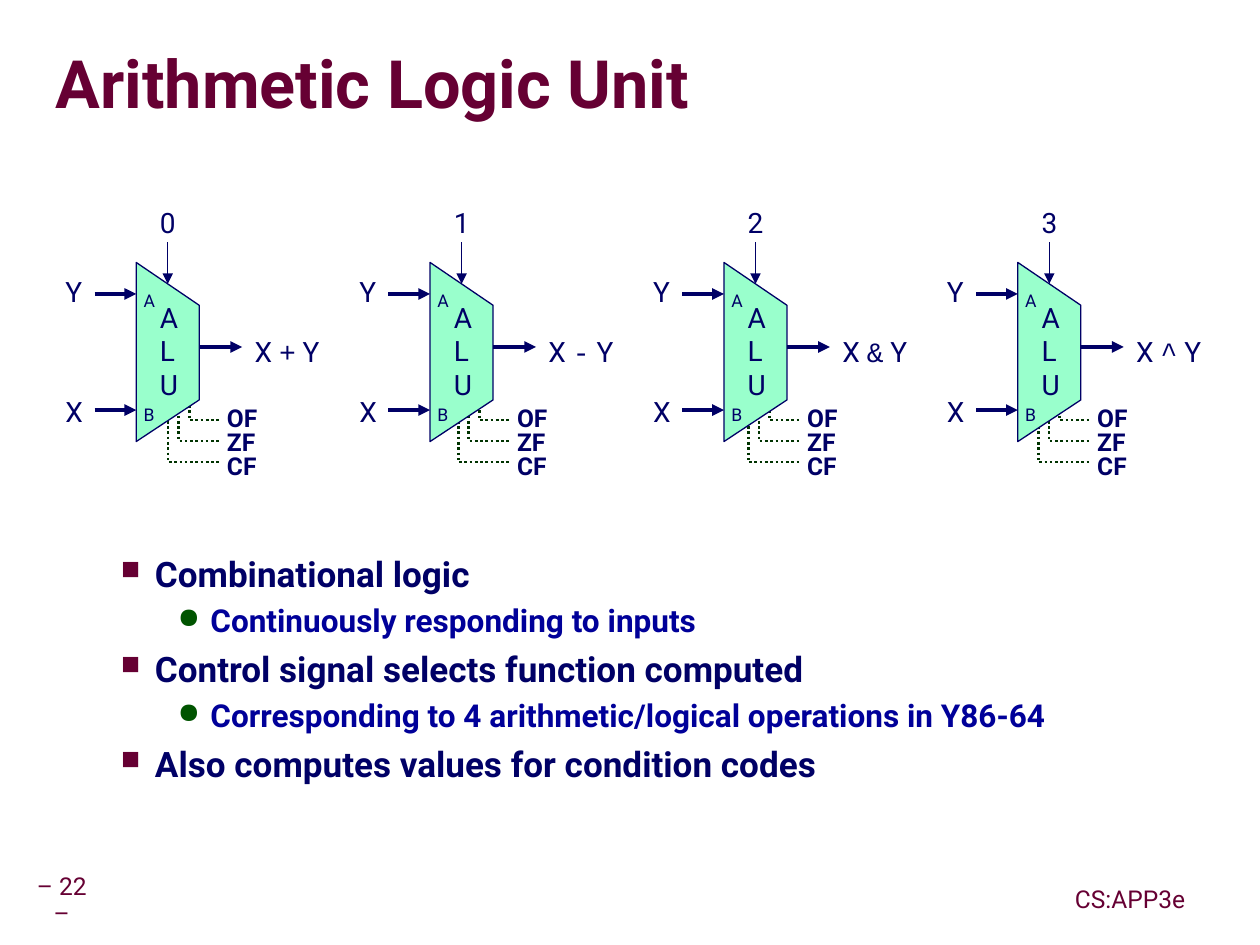
from dataclasses import dataclass
from lxml.etree import SubElement
from pptx import Presentation
from pptx.dml.color import RGBColor
from pptx.enum.dml import MSO_LINE
from pptx.enum.shapes import MSO_CONNECTOR
from pptx.enum.text import MSO_ANCHOR, MSO_AUTO_SIZE, PP_ALIGN
from pptx.oxml.ns import qn
from pptx.util import Inches, Pt


@dataclass(frozen=True)
class Theme:
    wine: str = "660033"
    navy: str = "000066"
    blue: str = "000099"
    moss: str = "003300"
    leaf: str = "005400"
    mint: str = "99FFCC"
    shade: str = "969696"
    font: str = "Roboto"
    mono: str = "Courier New"
    title: int = 38
    head: int = 20
    sub: int = 18
    label: int = 16
    small: int = 14
    port: int = 10
    thin: float = 0.75
    dot: float = 1.5
    thick: float = 2.25


def write(para, text, size, color, font, bold=False):
    run = para.add_run()
    run.text = text
    run.font.size = Pt(size)
    run.font.color.rgb = RGBColor.from_string(color)
    run.font.name = font
    run.font.bold = bold
    return run


class Deck:
    def __init__(self, theme):
        self.theme = theme
        self.show = Presentation()
        self.show.slide_width, self.show.slide_height = Inches(9.99), Inches(7.49)
        self.slide = self.show.slides.add_slide(self.show.slide_layouts[6])

    def frame(self, x, y, w, h, pad=(0.1, 0.05), wrap=False, anchor=MSO_ANCHOR.TOP):
        box = self.slide.shapes.add_textbox(*map(Inches, (x, y, w, h)))
        frame = box.text_frame
        frame.margin_left = frame.margin_right = Inches(pad[0])
        frame.margin_top = frame.margin_bottom = Inches(pad[1])
        frame.word_wrap = wrap
        frame.auto_size = MSO_AUTO_SIZE.NONE if wrap else MSO_AUTO_SIZE.SHAPE_TO_FIT_TEXT
        frame.vertical_anchor = anchor
        return frame

    def text(self, text, x, y, w, h, size=None, color=None, bold=False,
             align=PP_ALIGN.LEFT, space=1.0, **box):
        """Each line of the text becomes a paragraph; returns the last run."""
        look = self.theme
        frame = self.frame(x, y, w, h, **box)
        for i, line in enumerate(text.split("\n")):
            para = frame.add_paragraph() if i else frame.paragraphs[0]
            para.alignment, para.line_spacing = align, space
            run = write(para, line, size or look.label, color or look.navy, look.font, bold)
        return run

    def title(self, text):
        look = self.theme
        run = self.text(text, 0.44, 0.27, 9.52, 0.85, size=look.title, color=look.wine,
                        bold=True, space=0.87, pad=(0, 0), wrap=True,
                        anchor=MSO_ANCHOR.MIDDLE)
        glow = SubElement(SubElement(Inner(run), qn("a:effectLst")), qn("a:outerShdw"),
                          dist="35921", dir="2700000", algn="ctr")
        SubElement(glow, qn("a:srgbClr"), val=look.shade)
        # The effect must come directly after the text colour
        Inner(run).insert(1, glow.getparent())

    def arrow(self, x1, y1, x2, y2, width):
        line = self.slide.shapes.add_connector(
            MSO_CONNECTOR.STRAIGHT, *map(Inches, (x1, y1, x2, y2)))
        line.line.color.rgb = RGBColor.from_string(self.theme.navy)
        line.line.width = Pt(width)
        SubElement(line.line._get_or_add_ln(), qn("a:tailEnd"), type="triangle")
        SubElement(line._element.spPr, qn("a:effectLst"))

    def outline(self, points, color, width, fill=None, dash=None):
        spots = [(Inches(x), Inches(y)) for x, y in points]
        pen = self.slide.shapes.build_freeform(*spots[0])
        pen.add_line_segments(spots[1:], close=fill is not None)
        shape = pen.convert_to_shape()
        shape.shadow.inherit = False
        if fill:
            shape.fill.solid()
            shape.fill.fore_color.rgb = RGBColor.from_string(fill)
        else:
            shape.fill.background()
        shape.line.color.rgb = RGBColor.from_string(color)
        shape.line.width = Pt(width)
        if dash:
            shape.line.dash_style = dash

    def flags(self, x):
        """Condition codes, with dotted leads stepping down from the unit."""
        look = self.theme
        for i, code in enumerate(("OF", "ZF", "CF")):
            left, top, low = x - 0.25 - i / 12, 3.17 + i / 12, 3.33 + i / 6
            self.outline([(left, top), (left, low), (x, low)], look.moss, look.dot,
                         dash=MSO_LINE.ROUND_DOT)
            self.text(code, x, 3.17 + 0.19 * i, 0.37, 0.31, size=look.small, bold=True,
                      space=0.9, pad=(0.05, 0.05))

    def unit(self, x, code, sign):
        """One ALU; x is its left edge."""
        look = self.theme
        right = x + 0.5
        self.arrow(x + 0.25, 1.92, x + 0.25, 2.25, look.thin)
        self.outline([(x, 2.08), (right, 2.42), (right, 3.17), (x, 3.5)],
                     look.navy, look.thin, fill=look.mint)
        self.text("A\nL\nU", x + 0.09, 2.33, 0.42, 0.9, wrap=True)
        for name, port, y, top, spot in (("Y", "A", 2.33, 2.13, 2.25),
                                         ("X", "B", 3.25, 3.08, 3.15)):
            self.arrow(x - 0.33, y, x, y, look.thick)
            self.text(name, x - 0.66, top, 0.35, 0.37)
            self.text(port, x - 0.04, spot, 0.29, 0.27, size=look.port)
        self.arrow(right, 2.75, right + 0.34, 2.75, look.thick)
        para = self.frame(right + 0.34, 2.6, 0.75, 0.37).paragraphs[0]
        for part, font in (("X ", look.font), (sign, look.mono), (" Y", look.font)):
            write(para, part, look.label, look.navy, font)
        self.text(code, x + 0.09, 1.58, 0.32, 0.37)

    def points(self, items):
        look = self.theme
        # Per level: size, colour, indent, hang, line and top spacing, mark, its colour, its size
        kinds = ((look.head, look.navy, 0.81, 0.27, 1.0, 5, "■", look.wine, 75),
                 (look.sub, look.blue, 1.25, 0.26, 1.07, 2, "●", look.leaf, 90))
        frame = self.frame(0.32, 4.33, 9.07, 2.7, wrap=True)
        for i, (level, text) in enumerate(items):
            size, color, left, hang, space, gap, mark, tint, scale = kinds[level]
            para = frame.add_paragraph() if i else frame.paragraphs[0]
            para.level, para.line_spacing, para.space_before = level, space, Pt(gap)
            props = para._p.get_or_add_pPr()
            props.set("marL", str(Inches(left)))
            props.set("indent", str(-Inches(hang)))
            SubElement(SubElement(props, qn("a:buClr")), qn("a:srgbClr"), val=tint)
            SubElement(props, qn("a:buSzPct"), val=str(scale * 1000))
            SubElement(props, qn("a:buChar"), char=mark)
            write(para, text, size, color, look.font, True)


def Inner(run):
    return run._r.get_or_add_rPr()


def main():
    look = Theme()
    deck = Deck(look)

    # Footer
    for text, x, w, wrap in (("– 22 –", 0.24, 0.5, True), ("CS:APP3e", 8.44, 1.04, False)):
        deck.text(text, x, 6.98, w, 0.32, size=look.small, color=look.wine, space=0.9,
                  align=PP_ALIGN.CENTER, pad=(0.05, 0.05), wrap=wrap,
                  anchor=MSO_ANCHOR.MIDDLE)

    # Condition codes lie behind the units
    for i in range(4):
        deck.flags(1.75 + 2.3 * i)

    deck.title("Arithmetic Logic Unit")

    # Units, one for each function
    for i, sign in enumerate("+-&^"):
        deck.unit(1.08 + 2.33 * i, str(i), sign)

    # Key points
    deck.points([
        (0, "Combinational logic"),
        (1, "Continuously responding to inputs"),
        (0, "Control signal selects function computed"),
        (1, "Corresponding to 4 arithmetic/logical operations in Y86-64"),
        (0, "Also computes values for condition codes"),
    ])
    deck.show.save("out.pptx")


if __name__ == "__main__":
    main()
